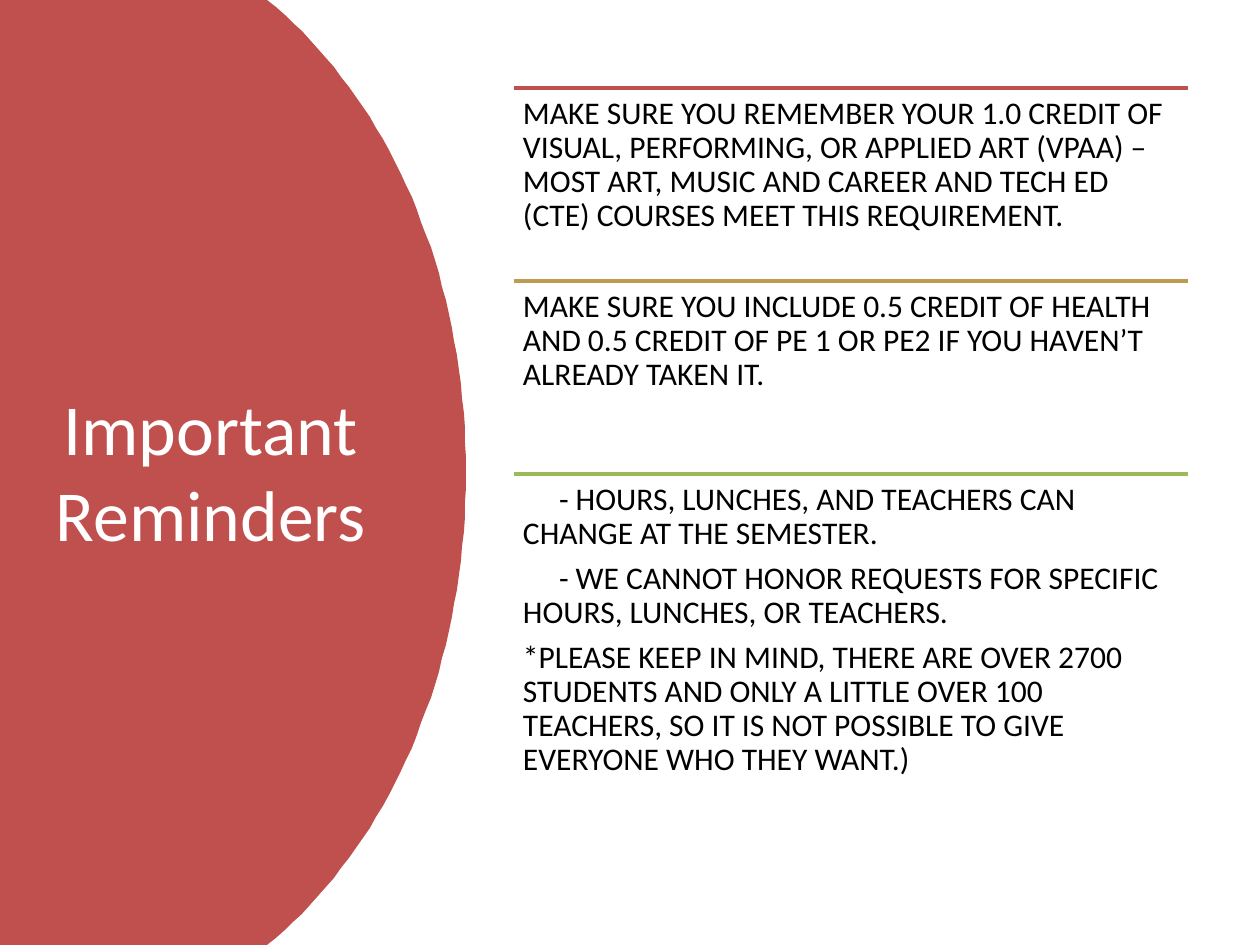
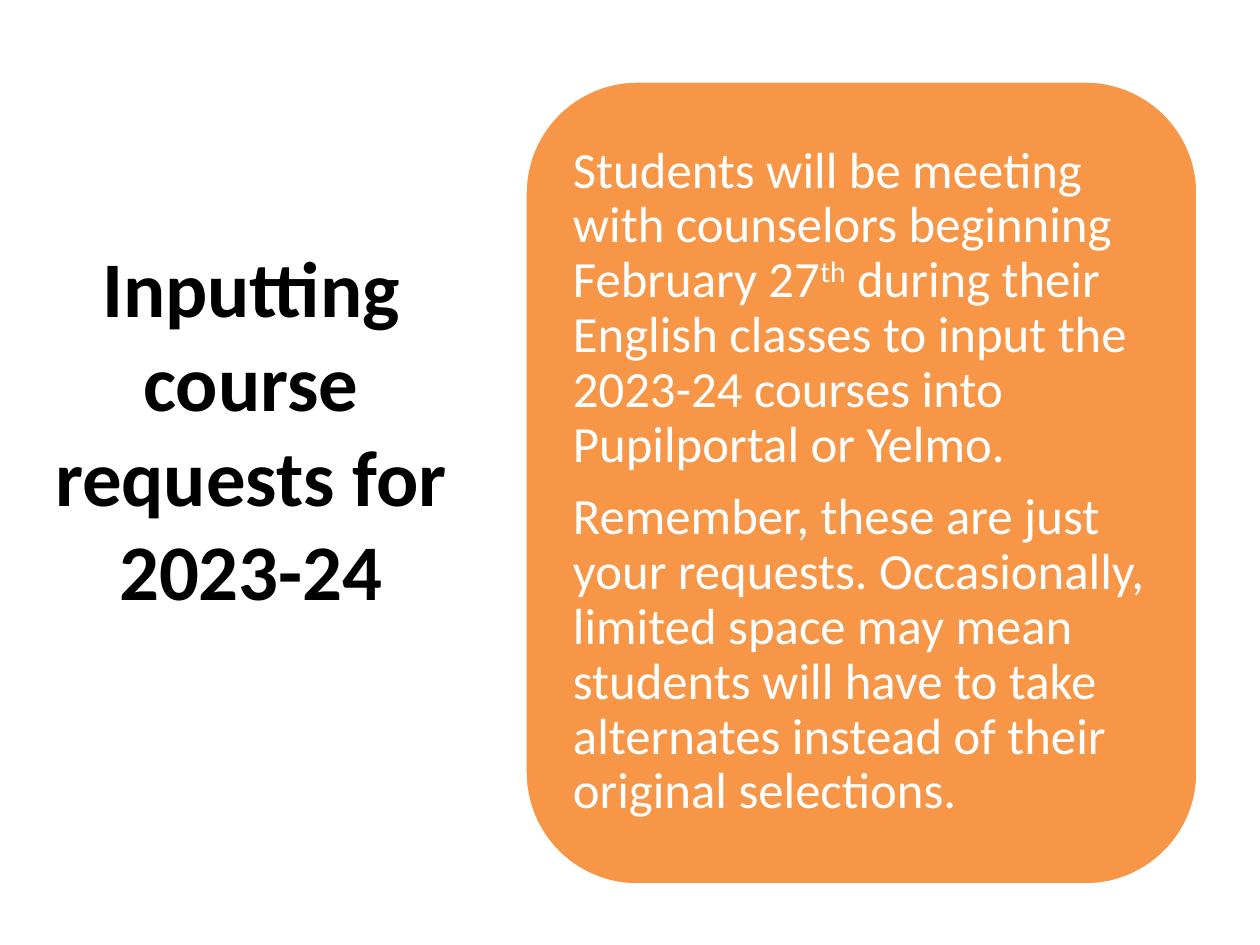
"""Build two slides of course request reminders."""
from lxml import etree
from pptx import Presentation
from pptx.dml.color import RGBColor
from pptx.enum.shapes import MSO_CONNECTOR, MSO_SHAPE
from pptx.enum.text import MSO_ANCHOR, MSO_AUTO_SIZE, PP_ALIGN
from pptx.oxml.ns import qn
from pptx.util import Pt

SCALE = 914400 / 126
WIDE, HIGH = 1260, 945
FONT = "Calibri"
TOP, MIDDLE = MSO_ANCHOR.TOP, MSO_ANCHOR.MIDDLE
LEFT, CENTER = PP_ALIGN.LEFT, PP_ALIGN.CENTER
NO_FIT = MSO_AUTO_SIZE.NONE
STRAIGHT, ROUND = MSO_CONNECTOR.STRAIGHT, MSO_SHAPE.ROUNDED_RECTANGLE
WHITE = RGBColor(0xFF, 0xFF, 0xFF)
BLACK = RGBColor(0, 0, 0)
RED = RGBColor(0xC0, 0x50, 0x4D)
GOLD = RGBColor(0xBD, 0x9B, 0x53)
GREEN = RGBColor(0x9B, 0xBB, 0x59)
ORANGE = RGBColor(0xF7, 0x96, 0x46)

TITLE_ONLY = 5
CURVE = ((267, 0), (387, 97), (466, 272), (466, 472))
STEPS = 40
RULE_X, RULE_Y, RULE_W, ROW = 514, 88, 674, 193
DASH_IN = 36

NOTES = (
    (RED, ROW, [
        "MAKE SURE YOU REMEMBER YOUR 1.0 CREDIT OF VISUAL, PERFORMING, OR "
        "APPLIED ART (VPAA) – MOST ART, MUSIC AND CAREER AND TECH ED (CTE) "
        "COURSES MEET THIS REQUIREMENT."]),
    (GOLD, ROW, [
        "MAKE SURE YOU INCLUDE 0.5 CREDIT OF HEALTH AND 0.5 CREDIT OF PE 1 "
        "OR PE2 IF YOU HAVEN’T ALREADY TAKEN IT."]),
    (GREEN, 418, [
        "- HOURS, LUNCHES, AND TEACHERS CAN CHANGE AT THE SEMESTER.",
        "- WE CANNOT HONOR REQUESTS FOR SPECIFIC HOURS, LUNCHES, OR TEACHERS.",
        "*PLEASE KEEP IN MIND, THERE ARE OVER 2700 STUDENTS AND ONLY A LITTLE "
        "OVER 100 TEACHERS, SO IT IS NOT POSSIBLE TO GIVE EVERYONE WHO THEY "
        "WANT.)"]),
)
STEPS_TEXT = (
    "Students will be meeting with counselors beginning February 27^th^ during "
    "their English classes to input the 2023-24 courses into Pupilportal or "
    "Yelmo.",
    "Remember, these are just your requests. Occasionally, limited space may "
    "mean students will have to take alternates instead of their original "
    "selections.",
)


def px(*sizes):
    """Turn pixel lengths into EMU."""
    return [round(size * SCALE) for size in sizes]


def style(item, **values):
    """Set each attribute of item from the given values."""
    for name, value in values.items():
        setattr(item, name, value)


def place(shape, box):
    """Move shape to a pixel box."""
    style(shape, **dict(zip(("left", "top", "width", "height"), px(*box))))


def add_run(para, text, size, color, bold=False):
    """Add a formatted run to a paragraph."""
    run = para.add_run()
    run.text = text
    style(run.font, name=FONT, size=Pt(size), bold=bold)
    run.font.color.rgb = color
    return run


def add_title(slide, text, box, size, color, bold=False):
    """Fill and move the title placeholder."""
    title = slide.shapes.title
    place(title, box)
    style(title.text_frame, word_wrap=True, auto_size=NO_FIT,
          vertical_anchor=MIDDLE)
    para = title.text_frame.paragraphs[0]
    para.alignment = CENTER
    add_run(para, text, size, color, bold)


def add_text(slide, lines, box, size, color, inset, anchor=TOP):
    """Add a text box; carets enclose superscript and a dash indents."""
    frame = slide.shapes.add_textbox(*px(*box)).text_frame
    pad = px(inset)[0]
    style(frame, word_wrap=True, auto_size=NO_FIT, vertical_anchor=anchor,
          margin_left=pad, margin_right=pad, margin_top=pad, margin_bottom=pad)
    for row, line in enumerate(lines):
        para = frame.add_paragraph() if row else frame.paragraphs[0]
        style(para, alignment=LEFT, line_spacing=0.9,
              space_after=Pt(0.35 * size))
        if line.startswith("-"):
            para._p.get_or_add_pPr().set("indent", str(px(DASH_IN)[0]))
        for part, text in enumerate(line.split("^")):
            run = add_run(para, text, size, color)
            if part % 2:
                run._r.get_or_add_rPr().set("baseline", "30000")


def paint(shape, fill, line=None):
    """Give shape a flat fill and an optional outline."""
    shape.shadow.inherit = False
    shape.fill.solid()
    shape.fill.fore_color.rgb = fill
    if line is None:
        shape.line.fill.background()
    else:
        shape.line.color.rgb = line
        shape.line.width = Pt(2)


def add_rule(slide, left, top, width, color):
    """Draw a level line."""
    rule = slide.shapes.add_connector(
        STRAIGHT, *px(left, top, left + width, top))
    rule.line.color.rgb = color
    rule.line.width = Pt(2)
    etree.SubElement(rule.element.spPr, qn("a:effectLst"))


def bend(time):
    """Find the point of the curve at a time from 0 to 1."""
    rest = 1 - time
    parts = (rest ** 3, 3 * rest ** 2 * time, 3 * rest * time ** 2, time ** 3)
    return tuple(sum(part * spot[axis] for part, spot in zip(parts, CURVE))
                 for axis in (0, 1))


def add_dome(slide):
    """Draw the curved panel behind the title."""
    upper = [bend(step / STEPS) for step in range(STEPS + 1)]
    lower = [(x, HIGH - y) for x, y in reversed(upper)]
    path = slide.shapes.build_freeform(0, 0, scale=SCALE)
    path.add_line_segments(upper + lower + [(0, HIGH)], close=True)
    dome = path.convert_to_shape()
    paint(dome, RED)
    slide.shapes.title.element.addprevious(dome.element)


def main():
    """Build and save both slides."""
    deck = Presentation()
    deck.slide_width, deck.slide_height = px(WIDE, HIGH)
    layout = deck.slide_layouts[TITLE_ONLY]

    slide = deck.slides.add_slide(layout)
    add_dome(slide)
    add_title(slide, "Important Reminders", (0, 260, 422, 420), 41, WHITE)
    for row, (color, height, lines) in enumerate(NOTES):
        top = RULE_Y + row * ROW
        add_rule(slide, RULE_X, top, RULE_W, color)
        add_text(slide, lines, (RULE_X, top, RULE_W, height), 18, BLACK, 9)

    slide = deck.slides.add_slide(layout)
    add_title(slide, "Inputting course requests for 2023-24",
              (30, 147, 442, 561), 45, BLACK, bold=True)
    card = slide.shapes.add_shape(ROUND, *px(525, 81, 673, 804))
    paint(card, ORANGE, WHITE)
    add_text(slide, STEPS_TEXT, (558, 113, 607, 738), 29, WHITE, 15, MIDDLE)

    deck.save("out.pptx")


if __name__ == "__main__":
    main()
